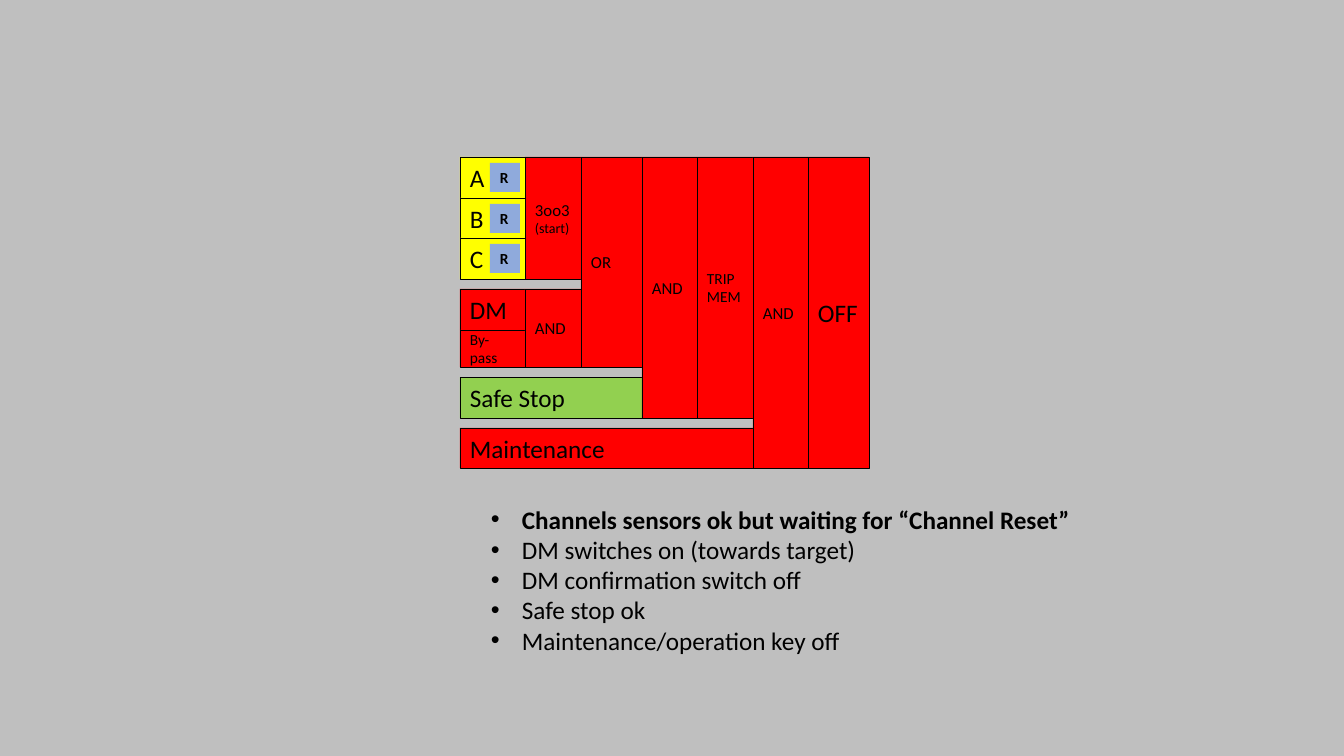
from lxml import etree
from pptx import Presentation
from pptx import util as u
from pptx.dml.color import RGBColor
from pptx.enum import shapes, text
from pptx.oxml import ns

PX = 914400 / 100.8
BLACK = RGBColor(0, 0, 0)
GREY = RGBColor(0xBF, 0xBF, 0xBF)
RED = RGBColor(0xFF, 0, 0)
YELLOW = RGBColor(0xFF, 0xFF, 0)
GREEN = RGBColor(0x92, 0xD0, 0x50)
BLUE = RGBColor(0x8F, 0xAA, 0xDC)


def px(n):
    return u.Emu(round(n * PX))


def block(left, top, right, bottom, color, lines, edge=True):
    box = slide.shapes.add_shape(shapes.MSO_SHAPE.RECTANGLE, px(left), px(top),
                                 px(right - left), px(bottom - top))
    box.shadow.inherit = False
    box.fill.solid()
    box.fill.fore_color.rgb = color
    if edge:
        box.line.color.rgb = BLACK
        box.line.width = u.Pt(0.25)
    else:
        box.line.fill.background()
    frame = box.text_frame
    frame.word_wrap = True
    frame.vertical_anchor = text.MSO_ANCHOR.MIDDLE
    for i, (words, size) in enumerate(lines):
        para = frame.add_paragraph() if i else frame.paragraphs[0]
        para.text = words
        para.alignment = text.PP_ALIGN.LEFT
        para.font.name = "Calibri"
        para.font.size = u.Pt(size)
        para.font.color.rgb = BLACK
        para.font.bold = not edge


deck = Presentation()
deck.slide_width, deck.slide_height = px(1344), px(756)
slide = deck.slides.add_slide(deck.slide_layouts[6])
slide.background.fill.solid()
slide.background.fill.fore_color.rgb = GREY

# Logic blocks: left, top, right, bottom, colour, lines with sizes
for item in [
    (697, 157, 753, 418, RED, [("TRIP", 11), ("MEM", 11)]),
    (525, 157, 581, 279, RED, [("3oo3", 12), ("(start)", 10)]),
    (460, 289, 525, 330, RED, [("DM", 18)]),
    (581, 157, 642, 367, RED, [("OR", 12)]),
    (460, 377, 642, 418, GREEN, [("Safe Stop", 18)]),
    (642, 157, 697, 418, RED, [("AND", 12)]),
    (460, 428, 753, 468, RED, [("Maintenance", 18)]),
    (808, 157, 869, 468, RED, [("OFF", 18)]),
    (460, 330, 525, 367, RED, [("By-pass", 11)]),
    (525, 289, 581, 367, RED, [("AND", 12)]),
    (753, 157, 808, 468, RED, [("AND", 12)]),
]:
    block(*item)

# Channels with their reset buttons
edges = [157, 198, 238, 279]
for name, top, bottom in zip("ABC", edges, edges[1:]):
    block(460, top, 525, bottom, YELLOW, [(name, 18)])
    block(490, top + 6, 520, top + 35, BLUE, [("R", 11)], edge=False)

# State notes
notes = slide.shapes.add_textbox(px(481), px(499), px(767), px(163)).text_frame
notes.word_wrap = True
for i, words in enumerate([
    "Channels sensors ok but waiting for “Channel Reset”",
    "DM switches on (towards target)",
    "DM confirmation switch off",
    "Safe stop ok",
    "Maintenance/operation key off",
]):
    para = notes.add_paragraph() if i else notes.paragraphs[0]
    para.text = words
    para.font.name = "Calibri"
    para.font.size = u.Pt(18)
    para.font.color.rgb = BLACK
    para.font.bold = i == 0
    props = para._p.get_or_add_pPr()
    props.set("marL", str(px(31)))
    props.set("indent", str(-px(31)))
    font = etree.Element(ns.qn("a:buFont"), typeface="Arial")
    mark = etree.Element(ns.qn("a:buChar"), char="•")
    props.insert(0, font)
    props.insert(1, mark)

deck.save("out.pptx")
